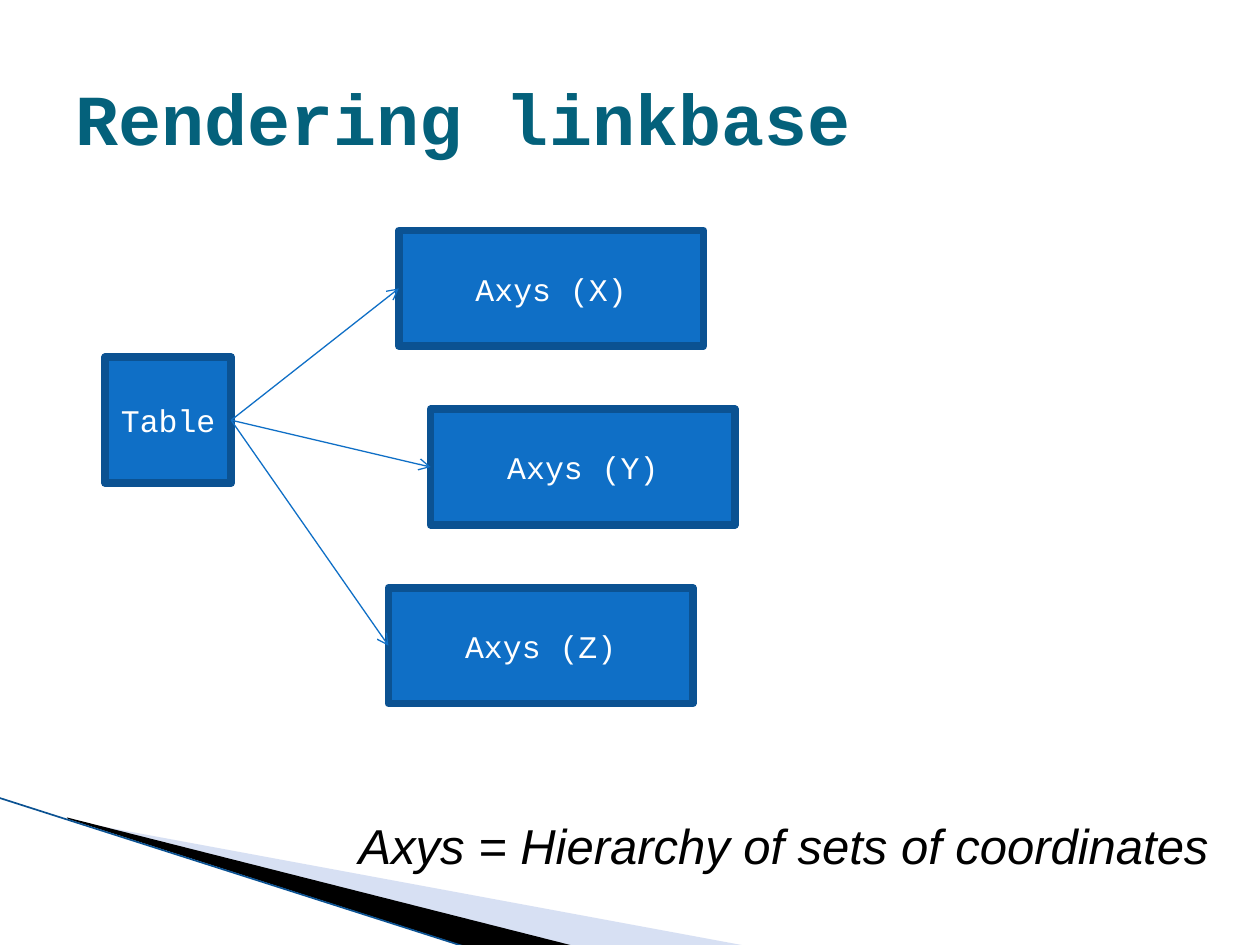
from lxml import etree
from pptx import Presentation
from pptx.dml.color import RGBColor
from pptx.enum.shapes import MSO_CONNECTOR, MSO_SHAPE
from pptx.enum.text import MSO_ANCHOR, MSO_AUTO_SIZE, PP_ALIGN
from pptx.oxml.ns import qn
from pptx.util import Cm, Pt

STRAIGHT, RECTANGLE = MSO_CONNECTOR.STRAIGHT, MSO_SHAPE.RECTANGLE
MIDDLE = MSO_ANCHOR.MIDDLE
LEFT, CENTER = PP_ALIGN.LEFT, PP_ALIGN.CENTER
LEFT_SIDE, RIGHT_SIDE = 1, 3

TEAL = RGBColor(0x04, 0x61, 0x7B)
BLUE = RGBColor(0x0F, 0x6F, 0xC6)
DARK_BLUE = RGBColor(0x0B, 0x52, 0x92)
PALE_BLUE = RGBColor(0x9D, 0xB2, 0xE1)
BLACK = RGBColor(0, 0, 0)
WHITE = RGBColor(0xFF, 0xFF, 0xFF)
MONO, SANS = "Courier New", "Arial"

# Lengths in centimetres
TITLE = "Rendering linkbase"
NOTE = "Axys = Hierarchy of sets of coordinates"
ROOT = ("Table", 2.12, 7.2, 2.54, 2.54)
AXES = [("Axys (X)", 8.04), ("Axys (Y)", 8.68), ("Axys (Z)", 7.83)]
AXIS_TOP, AXIS_STEP = 4.65, 3.6
AXIS_WIDTH, AXIS_HEIGHT = 6.14, 2.33
WEDGES = [
    ([(1.4, 16.54), (15.11, 19.08), (11.58, 19.08), (1.4, 16.51)], PALE_BLUE, 40),
    ([(1.35, 16.48), (11.61, 19.08), (9.45, 19.1), (1.37, 16.51)], BLACK, 100),
]
EDGE = (-0.03, 16.08, 9.42, 19.1)


def write(frame, text, size, color, font=MONO, align=LEFT, anchor=MIDDLE,
          bold=False, italic=False, wrap=True):
    frame.word_wrap = wrap
    frame.vertical_anchor = anchor
    paragraph = frame.paragraphs[0]
    paragraph.alignment = align
    run = paragraph.add_run()
    run.text = text
    run.font.name, run.font.size = font, Pt(size)
    run.font.bold, run.font.italic = bold, italic
    run.font.color.rgb = color


def add_wedge(shapes, points, color, opacity):
    corners = [(Cm(x), Cm(y)) for x, y in points]
    builder = shapes.build_freeform(*corners[0])
    builder.add_line_segments(corners[1:], close=True)
    wedge = builder.convert_to_shape()
    wedge.shadow.inherit = False
    wedge.fill.solid()
    wedge.fill.fore_color.rgb = color
    wedge.line.fill.background()
    if opacity < 100:
        tint = wedge._element.spPr.find(qn("a:solidFill"))[0]
        etree.SubElement(tint, qn("a:alpha"), val=str(opacity * 1000))


def add_box(shapes, label, *place):
    box = shapes.add_shape(RECTANGLE, *map(Cm, place))
    box.shadow.inherit = False
    box.fill.solid()
    box.fill.fore_color.rgb = BLUE
    box.line.color.rgb = DARK_BLUE
    box.line.width = Pt(4.33)
    write(box.text_frame, label, 18, WHITE, align=CENTER)
    return box


def add_line(shapes, ends, color, width):
    line = shapes.add_connector(STRAIGHT, *map(Cm, ends))
    line.line.color.rgb = color
    line.line.width = Pt(width)
    etree.SubElement(line._element.spPr, qn("a:effectLst"))
    return line


def add_arrow(shapes, source, target):
    arrow = add_line(shapes, (0, 0, 0, 0), BLUE, 0.75)
    arrow.begin_connect(source, RIGHT_SIDE)
    arrow.end_connect(target, LEFT_SIDE)
    etree.SubElement(arrow.line._get_or_add_ln(), qn("a:tailEnd"), type="arrow")


def main():
    deck = Presentation()
    deck.slide_width, deck.slide_height = Cm(25.4), Cm(19.05)
    slide = deck.slides.add_slide(deck.slide_layouts[5])
    shapes = slide.shapes

    for points, color, opacity in WEDGES:
        add_wedge(shapes, points, color, opacity)
    add_line(shapes, EDGE, DARK_BLUE, 0.95)

    title = shapes.title
    title.left, title.top, title.width, title.height = map(Cm, (1.27, 0.76, 22.86, 3.18))
    write(title.text_frame, TITLE, 41, TEAL, bold=True)

    root = add_box(shapes, *ROOT)
    note = shapes.add_textbox(Cm(6.98), Cm(16.31), Cm(17.86), Cm(1.44))
    write(note.text_frame, NOTE, 28, BLACK, font=SANS, anchor=MSO_ANCHOR.TOP,
          italic=True, wrap=False)
    note.text_frame.auto_size = MSO_AUTO_SIZE.SHAPE_TO_FIT_TEXT

    axes = [add_box(shapes, label, left, AXIS_TOP + row * AXIS_STEP, AXIS_WIDTH, AXIS_HEIGHT)
            for row, (label, left) in enumerate(AXES)]
    for axis in axes:
        add_arrow(shapes, root, axis)

    deck.save("out.pptx")


if __name__ == "__main__":
    main()
